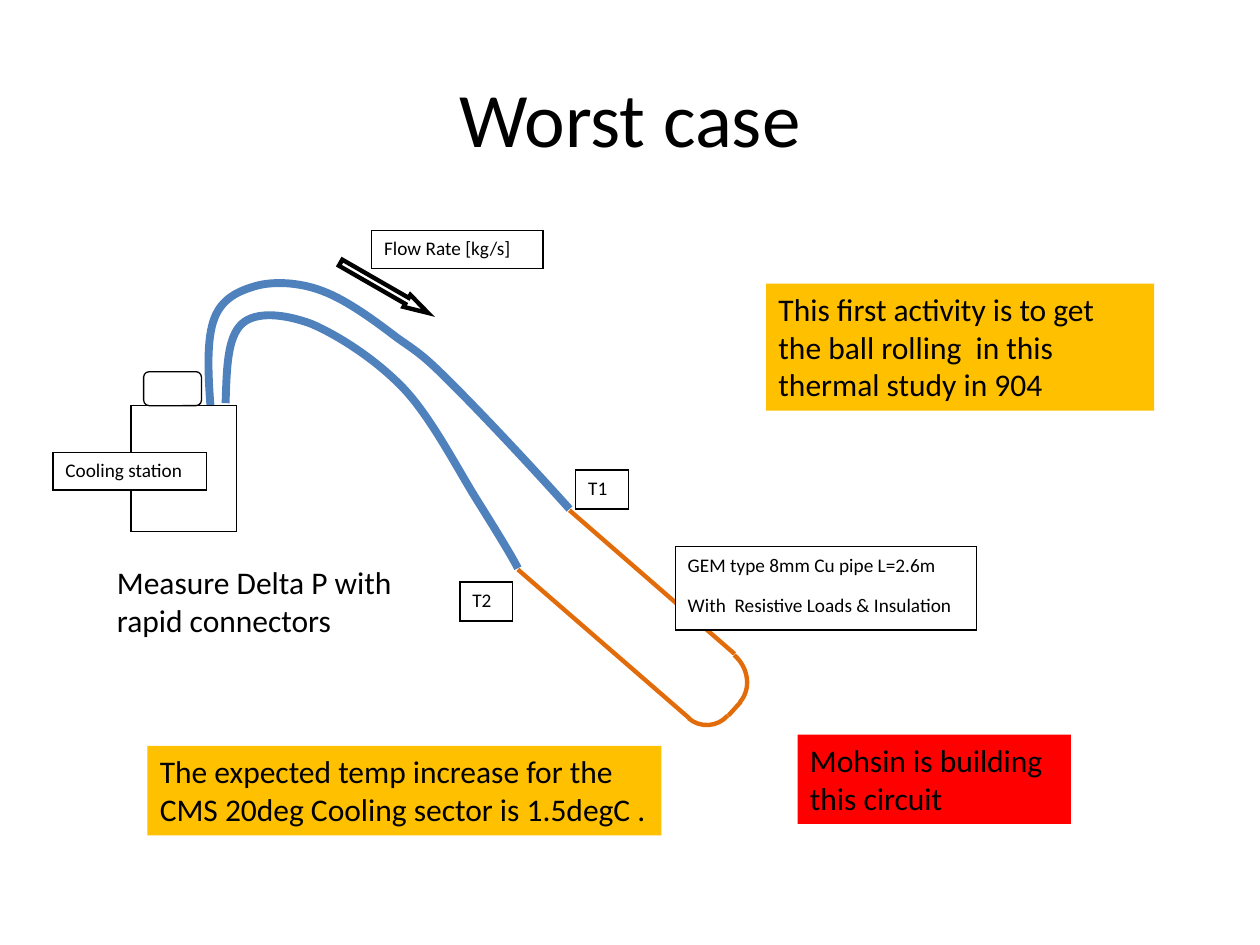
from copy import deepcopy

from lxml import etree
from pptx import Presentation
from pptx.dml.color import RGBColor
from pptx.enum.shapes import MSO_CONNECTOR, MSO_SHAPE
from pptx.enum.text import MSO_ANCHOR, MSO_AUTO_SIZE, PP_ALIGN
from pptx.oxml.ns import qn
from pptx.util import Inches, Pt

BLACK = RGBColor(0x00, 0x00, 0x00)
WHITE = RGBColor(0xFF, 0xFF, 0xFF)
BLUE = RGBColor(0x4F, 0x81, 0xBD)
COPPER = RGBColor(0xE3, 0x6C, 0x0A)
AMBER = RGBColor(0xFF, 0xC0, 0x00)
RED = RGBColor(0xFF, 0x00, 0x00)
RECT = MSO_SHAPE.RECTANGLE
FONT = "Calibri"
ARC_HANDLE = 0.55

TITLE = "Worst case"
TITLE_BOX = (0.5, 0.3, 9, 1.25)

SUPPLY_HOSE = [
    (1.67, 3.22), (1.65, 2.95), (1.64, 2.69), (1.7, 2.53),
    (1.76, 2.37), (1.89, 2.31), (2.03, 2.27),
    (2.17, 2.23), (2.38, 2.24), (2.56, 2.31),
    (2.75, 2.38), (2.98, 2.55), (3.15, 2.68),
    (3.32, 2.8), (3.35, 2.81), (3.58, 3.04),
    (3.81, 3.27), (4.17, 3.65), (4.52, 4.04),
]
RETURN_HOSE = [
    (1.79, 3.2), (1.8, 2.94), (1.8, 2.68), (1.92, 2.57),
    (2.03, 2.47), (2.25, 2.49), (2.47, 2.57),
    (2.68, 2.66), (2.98, 2.85), (3.2, 3.08),
    (3.42, 3.31), (3.63, 3.72), (3.78, 3.96),
    (3.93, 4.2), (4.06, 4.41), (4.11, 4.51),
]
UPPER_BEND = ((5.71, 5.26, 0.28, 0.25), 41.1)
LOWER_BEND = ((5.51, 5.58, 0.22, 0.22), 131.1)
PIPE_RUNS = [
    ((4.52, 4.05), (5.83, 5.19)),
    ((4.11, 4.52), (5.47, 5.7)),
]
PIPE_END = ((5.88, 5.57), (5.78, 5.68))

STATION = (1.04, 3.22, 0.84, 1)
STATION_CAP = (1.14, 2.95, 0.46, 0.27)
FLOW_ARROW = (2.65, 2.23, 0.8, 0.11)
SENSORS = [
    ("T1", (4.57, 3.73, 0.42, 0.31)),
    ("T2", (3.65, 4.62, 0.42, 0.31)),
]
LABELS = [
    ("Flow Rate [kg/s]", (2.95, 1.83, 1.36, 0.3)),
    ("Cooling station", (0.42, 3.59, 1.22, 0.3)),
    ("GEM type 8mm Cu pipe L=2.6m\nWith  Resistive Loads & Insulation",
     (5.36, 4.34, 2.39, 0.66)),
]
NOTES = [
    ("The expected temp increase for the CMS 20deg Cooling sector is 1.5degC .",
     (1.17, 5.92, 4.08, 0.71), AMBER),
    ("This first activity is to get the ball rolling  in this thermal study in 904",
     (6.08, 2.25, 3.08, 1.01), AMBER),
    ("Mohsin is building  this circuit", (6.33, 5.83, 2.17, 0.71), RED),
    ("Measure Delta P with rapid connectors", (0.83, 4.42, 2.5, 0.71), None),
]


def inches(values):
    return [Inches(v) for v in values]


def set_line(sp, color, width):
    sp.line.color.rgb = color
    sp.line.width = Pt(width)


def write(tf, text, size, align=PP_ALIGN.LEFT, space_after=0):
    tf.text = text
    tf.word_wrap = True
    for p in tf.paragraphs:
        p.alignment = align
        p.space_after = Pt(space_after)
        for r in p.runs:
            r.font.name = FONT
            r.font.size = Pt(size)
            r.font.color.rgb = BLACK


def add_curve(shapes, points, color, width):
    start, *rest = [inches(point) for point in points]
    builder = shapes.build_freeform(*start)
    builder.add_line_segments(rest, close=False)
    sp = builder.convert_to_shape()
    sp.shadow.inherit = False
    sp.fill.background()
    set_line(sp, color, width)
    outline = next(sp._element.iter(qn("a:path")))
    lines = outline.findall(qn("a:lnTo"))
    for i in range(0, len(lines), 3):
        bezier = etree.SubElement(outline, qn("a:cubicBezTo"))
        for line in lines[i:i + 3]:
            bezier.append(line[0])
            outline.remove(line)
    return sp, outline


def add_bend(shapes, box, rotation):
    x, y, w, h = box
    quarter = [(x, y), (x + ARC_HANDLE * w, y),
               (x + w, y + (1 - ARC_HANDLE) * h), (x + w, y + h)]
    sp, arc = add_curve(shapes, quarter, COPPER, 2.5)
    sp.rotation = rotation
    sector = deepcopy(arc)
    arc.set("fill", "none")
    sector.set("stroke", "0")
    corner = etree.SubElement(sector, qn("a:lnTo"))
    etree.SubElement(corner, qn("a:pt"), x="0", y=sector.get("h"))
    etree.SubElement(sector, qn("a:close"))
    arc.addnext(sector)


def add_pipe(shapes, start, end):
    line = shapes.add_connector(
        MSO_CONNECTOR.STRAIGHT, *inches(start), *inches(end))
    set_line(line, COPPER, 2.5)
    etree.SubElement(line._element.spPr, qn("a:effectLst"))


def add_part(shapes, shape, box, width=0.75):
    sp = shapes.add_shape(shape, *inches(box))
    sp.shadow.inherit = False
    sp.fill.solid()
    sp.fill.fore_color.rgb = WHITE
    set_line(sp, BLACK, width)
    etree.SubElement(sp.line._ln, qn("a:miter"), lim="800000")
    return sp


def add_label(shapes, text, box):
    tf = add_part(shapes, RECT, box).text_frame
    write(tf, text, 11, space_after=10)
    tf.vertical_anchor = MSO_ANCHOR.TOP


def add_note(shapes, text, box, fill):
    sp = shapes.add_textbox(*inches(box))
    if fill is not None:
        sp.fill.solid()
        sp.fill.fore_color.rgb = fill
    write(sp.text_frame, text, 18)
    sp.text_frame.auto_size = MSO_AUTO_SIZE.SHAPE_TO_FIT_TEXT


def add_circuit(shapes):
    add_curve(shapes, SUPPLY_HOSE, BLUE, 4.5)
    add_part(shapes, RECT, STATION)
    add_part(shapes, MSO_SHAPE.ROUNDED_RECTANGLE, STATION_CAP)
    add_bend(shapes, *UPPER_BEND)
    for run in PIPE_RUNS:
        add_pipe(shapes, *run)
    add_bend(shapes, *LOWER_BEND)
    add_pipe(shapes, *PIPE_END)
    add_curve(shapes, RETURN_HOSE, BLUE, 4.5)
    for sensor in SENSORS:
        add_label(shapes, *sensor)
    arrow = add_part(shapes, MSO_SHAPE.RIGHT_ARROW, FLOW_ARROW, 2.5)
    arrow.adjustments[0], arrow.adjustments[1] = 0.5, 1.75
    arrow.rotation = 29.9
    for label in LABELS:
        add_label(shapes, *label)


def main():
    prs = Presentation()
    prs.slide_width, prs.slide_height = Inches(10), Inches(7.5)
    s = prs.slides.add_slide(prs.slide_layouts[5])

    title = s.shapes.title
    title.left, title.top, title.width, title.height = inches(TITLE_BOX)
    write(title.text_frame, TITLE, 44, PP_ALIGN.CENTER)
    title.text_frame.vertical_anchor = MSO_ANCHOR.MIDDLE

    add_circuit(s.shapes.add_group_shape().shapes)
    for note in NOTES:
        add_note(s.shapes, *note)

    prs.save("out.pptx")


if __name__ == "__main__":
    main()
